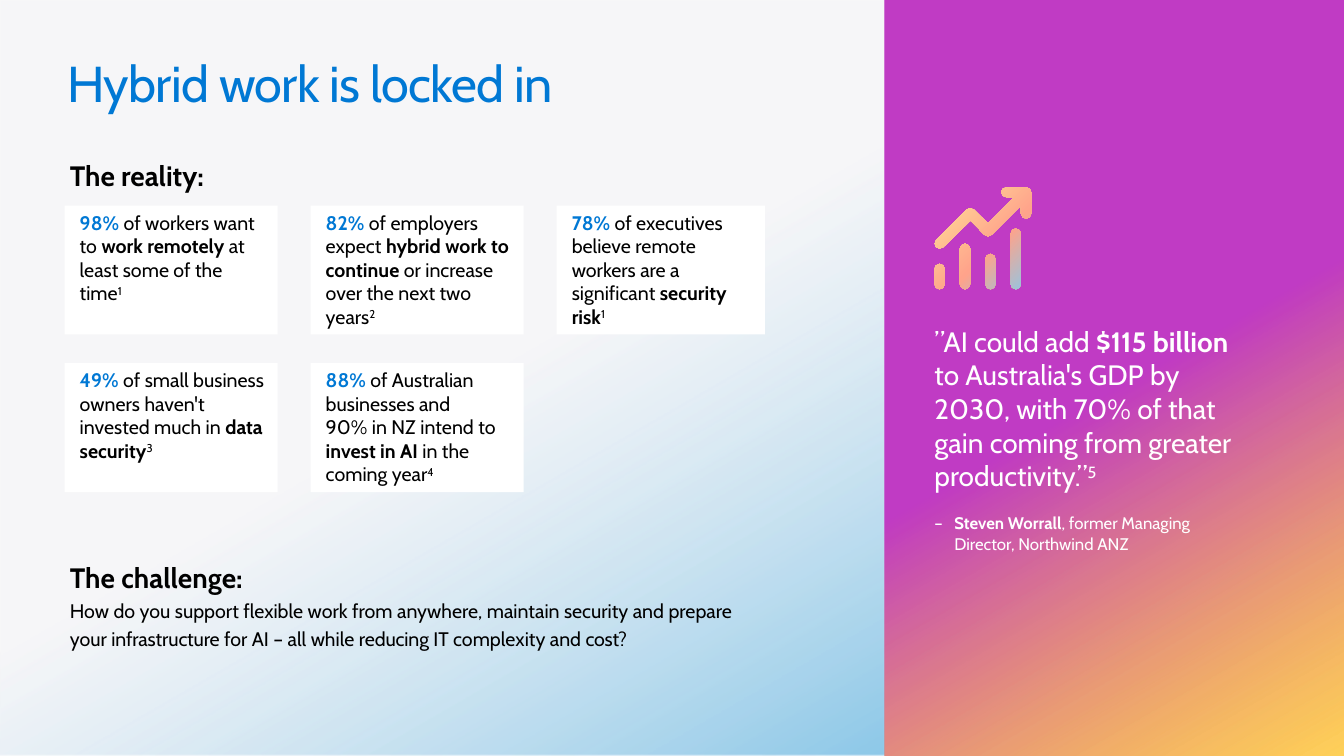
from lxml import etree
from pptx import Presentation
from pptx.dml.color import RGBColor
from pptx.enum import shapes, text
from pptx.oxml import parse_xml
from pptx.oxml.ns import nsdecls, qn
from pptx.util import Cm, Pt

FONT = "Cabin"
BLUE = RGBColor(0x00, 0x78, 0xD4)
BLACK = RGBColor(0x00, 0x00, 0x00)
WHITE = RGBColor(0xFF, 0xFF, 0xFF)
MIST = RGBColor(0xF4, 0xF3, 0xF5)
SKY = RGBColor(0x8D, 0xC8, 0xE8)
PURPLE = RGBColor(0xC0, 0x3B, 0xC4)
AMBER = RGBColor(0xFF, 0xB9, 0x00)
PEACH = RGBColor(0xFF, 0xA3, 0x8B)
CREAM = RGBColor(0xFF, 0xE3, 0x99)

TITLE = "Hybrid work is locked in"
REALITY = "The reality:"
CHALLENGE = "The challenge:"
# Words with their letter spacing in points
QUESTION = [
    ("How do you support flexible work from anywhere, maintain security and prepare your ", 0),
    ("infrastructure ", -0.1), ("for AI – all while ", 0), ("reducing ", -0.1),
    ("IT complexity and ", 0), ("cost?", -0.2),
]
# Each fact: figure, text parts (every second part is bold), source number
FACTS = [
    ("98% ", ["of workers want to ", "work remotely ", "at least some of the time"], "1"),
    ("82% ", ["of employers expect ", "hybrid work to continue ",
              "or increase over the next two years"], "2"),
    ("78% ", ["of executives believe remote workers are a significant ", "security risk"], "1"),
    ("49% ", ["of small business owners haven't invested much in ", "data security"], "3"),
    ("88% ", ["of Australian businesses and \n90% in NZ intend to ", "invest in AI ",
              "in the coming year"], "4"),
]
QUOTE = ["”AI could add ", "$115 billion ",
         "to Australia's GDP by 2030, with 70% of that gain coming from greater productivity.”"]
QUOTE_SOURCE = "5"
SPEAKER, ROLE = "Steven Worrall", ", former Managing Director, Northwind ANZ"

# Icon geometry in cm from its top left corner
BAR_TOPS = [1.93, 1.42, 1.68, 1.04]
BAR_PITCH, BAR_WIDTH, ICON_HEIGHT = 0.64, 0.26, 2.57
ARROW = [  # x, y, corner radius
    (2.01, 0.25, 0), (1.68, 0.25, 0.13), (1.68, 0, 0.13), (2.44, 0, 0.13),
    (2.44, 0.79, 0.13), (2.18, 0.79, 0.13), (2.18, 0.46, 0), (1.35, 1.29, 0.13),
    (0.91, 0.84, 0), (0.13, 1.6, 0.13), (-0.05, 1.42, 0.13), (0.9, 0.47, 0.13),
    (1.35, 0.91, 0),
]

WIDTH, HEIGHT = 33.87, 19.05
SPLIT = 22.3
LEFT, QUOTE_LEFT = 1.63, 23.55
CARD_TOP, CARD_HEIGHT = 5.18, 3.25
CARD_WIDTHS = [5.37, 5.37, 5.25]
COL_PITCH, ROW_PITCH = 6.2, 3.97


def set_gradient(sp, stops, direction):
    """Fill sp with (position %, colour, opacity %) stops along a direction element."""
    gs = "".join(
        f'<a:gs pos="{pos * 1000}"><a:srgbClr val="{color}">'
        f'<a:alpha val="{alpha * 1000}"/></a:srgbClr></a:gs>'
        for pos, color, alpha in stops)
    sp.fill.background()
    no_fill = sp._element.spPr.find(qn("a:noFill"))
    no_fill.getparent().replace(no_fill, parse_xml(
        f'<a:gradFill {nsdecls("a")} rotWithShape="1"><a:gsLst>{gs}</a:gsLst>'
        f'{direction}</a:gradFill>'))
    sp.line.fill.background()
    sp.shadow.inherit = False


def add_rect(s, x, y, w, h):
    sp = s.shapes.add_shape(shapes.MSO_SHAPE.RECTANGLE, Cm(x), Cm(y), Cm(w), Cm(h))
    sp.line.fill.background()
    sp.shadow.inherit = False
    return sp


def place(sp, x, y, w, h):
    sp.left, sp.top, sp.width, sp.height = Cm(x), Cm(y), Cm(w), Cm(h)


def prepare(sp, margins=(0, 0, 0, 0)):
    """Give sp a plain top-left text frame and return it."""
    tf = sp.text_frame
    tf.word_wrap = True
    tf.auto_size = text.MSO_AUTO_SIZE.NONE
    tf.vertical_anchor = text.MSO_ANCHOR.TOP
    tf.margin_left, tf.margin_top, tf.margin_right, tf.margin_bottom = map(Cm, margins)
    tf.paragraphs[0].alignment = text.PP_ALIGN.LEFT
    return tf


def add_textbox(s, x, y, w, h):
    return prepare(s.shapes.add_textbox(Cm(x), Cm(y), Cm(w), Cm(h)))


def add_run(p, words, size, color, bold=False, raised=0, spacing=0):
    for i, line in enumerate(words.split("\n")):
        if i:
            p.add_line_break()
        r = p.add_run()
        r.text = line
        f = r.font
        f.name, f.size, f.bold = FONT, Pt(size), bold
        f.color.rgb = color
        rPr = r._r.get_or_add_rPr()
        if raised:
            rPr.set("baseline", str(raised * 1000))
        if spacing:
            rPr.set("spc", str(round(spacing * 100)))


def add_parts(p, parts, note, size, color):
    for i, part in enumerate(parts):
        add_run(p, part, size, color, bold=i % 2 == 1)
    add_run(p, note, size, color, raised=30)


def remove_bullet(p):
    pPr = p._p.get_or_add_pPr()
    pPr.set("marL", "0")
    pPr.set("indent", "0")
    etree.SubElement(pPr, qn("a:buNone"))


def round_corners(corners):
    """Return outline points in which each rounded corner becomes three points."""
    points = []
    for i, (x, y, radius) in enumerate(corners):
        if not radius:
            points.append((x, y))
            continue
        ends = []
        for nx, ny, _ in (corners[i - 1], corners[(i + 1) % len(corners)]):
            k = radius / ((nx - x) ** 2 + (ny - y) ** 2) ** 0.5
            ends.append((x + k * (nx - x), y + k * (ny - y)))
        (ax, ay), (bx, by) = ends
        middle = (0.3 * (ax + bx) + 0.4 * x, 0.3 * (ay + by) + 0.4 * y)
        points += [ends[0], middle, ends[1]]
    return points


def add_growth_icon(s, x, y):
    outlines = [ARROW]
    for i, top in enumerate(BAR_TOPS):
        x0, x1, r = i * BAR_PITCH, i * BAR_PITCH + BAR_WIDTH, BAR_WIDTH / 2
        outlines.append([(x0, top, r), (x1, top, r), (x1, ICON_HEIGHT, r), (x0, ICON_HEIGHT, r)])
    builder = None
    for outline in outlines:
        points = [(px * 1000, py * 1000) for px, py in round_corners(outline)]
        if builder is None:
            builder = s.shapes.build_freeform(*points[0], scale=Cm(1) / 1000)
        else:
            builder.move_to(*points[0])
        builder.add_line_segments(points[1:], close=True)
    sp = builder.convert_to_shape(Cm(x), Cm(y))
    set_gradient(sp, [(0, SKY, 100), (40, PEACH, 100), (99, CREAM, 100)],
                 '<a:path path="circle"><a:fillToRect l="100000" t="100000"/></a:path>')


def main():
    prs = Presentation()
    prs.slide_width, prs.slide_height = Cm(WIDTH), Cm(HEIGHT)
    s = prs.slides.add_slide(prs.slide_layouts[1])
    title, body = s.placeholders

    diagonal = '<a:lin ang="3600000" scaled="0"/>'
    panels = [add_rect(s, 0, 0, SPLIT, HEIGHT), add_rect(s, SPLIT, 0, WIDTH - SPLIT, HEIGHT)]
    set_gradient(panels[0], [(51, MIST, 68), (100, SKY, 100)], diagonal)
    set_gradient(panels[1], [(51, PURPLE, 100), (100, AMBER, 65)], diagonal)
    for i, panel in enumerate(panels):
        s.shapes._spTree.insert(2 + i, panel._element)

    place(title, LEFT, 1.27, 30.6, 1.57)
    p = prepare(title, (0.07, 0.05, 0, 0)).paragraphs[0]
    add_run(p, TITLE, 36, BLUE, spacing=-0.5)

    place(body, LEFT, 3.99, 4.75, 0.86)
    p = prepare(body, (0.13, 0, 0, 0)).paragraphs[0]
    p.space_before = Pt(0)
    remove_bullet(p)
    add_run(p, REALITY, 20, BLACK, bold=True, spacing=-0.05)

    for i, (figure, parts, note) in enumerate(FACTS):
        row, col = divmod(i, 3)
        card = add_rect(s, LEFT + col * COL_PITCH, CARD_TOP + row * ROW_PITCH,
                        CARD_WIDTHS[col], CARD_HEIGHT)
        card.fill.solid()
        card.fill.fore_color.rgb = WHITE
        p = prepare(card, (0.38, 0.13, 0.25, 0.13)).paragraphs[0]
        add_run(p, figure, 14, BLUE, bold=True)
        add_parts(p, parts, note, 14, BLACK)

    tf = add_textbox(s, LEFT, 13.95, 17.65, 2.41)
    tf.margin_left = Cm(0.13)
    heading, question = tf.paragraphs[0], tf.add_paragraph()
    heading.line_spacing = question.line_spacing = 1.2
    add_run(heading, CHALLENGE, 20, BLACK, bold=True)
    for words, spacing in QUESTION:
        add_run(question, words, 14, BLACK, spacing=spacing)

    add_growth_icon(s, QUOTE_LEFT, 4.72)
    p = add_textbox(s, QUOTE_LEFT, 8.17, 7.87, 4.27).paragraphs[0]
    add_parts(p, QUOTE, QUOTE_SOURCE, 20, WHITE)

    p = add_textbox(s, QUOTE_LEFT, 12.93, 7.54, 1.02).paragraphs[0]
    pPr = p._p.get_or_add_pPr()
    pPr.set("marL", str(Cm(0.5)))
    pPr.set("indent", str(-Cm(0.5)))
    etree.SubElement(pPr, qn("a:buFont")).set("typeface", FONT)
    etree.SubElement(pPr, qn("a:buChar")).set("char", "–")
    add_run(p, SPEAKER, 12, WHITE, bold=True)
    add_run(p, ROLE, 12, WHITE)

    prs.save("out.pptx")


if __name__ == "__main__":
    main()
